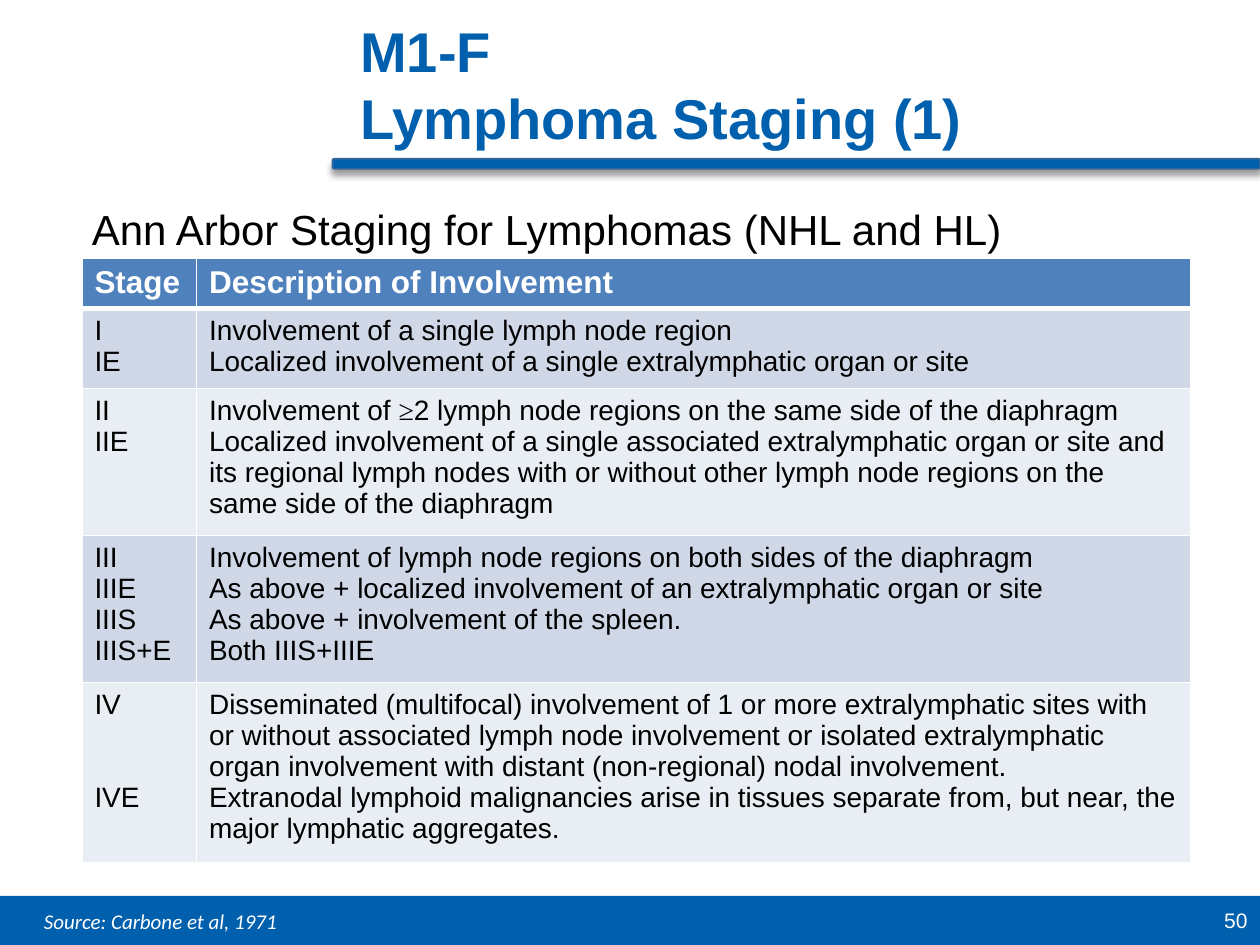
from dataclasses import dataclass

from lxml import etree
from pptx import Presentation
from pptx.dml.color import RGBColor
from pptx.enum.shapes import MSO_SHAPE
from pptx.enum.text import MSO_ANCHOR, MSO_AUTO_SIZE, PP_ALIGN
from pptx.oxml import parse_xml
from pptx.oxml.ns import nsdecls, qn
from pptx.util import Inches, Pt


@dataclass(frozen=True)
class Theme:
    blue: str = "0060AD"
    outline: str = "336699"
    header: str = "4F81BD"
    bands: tuple = ("D0D8E8", "E9EDF4")
    white: str = "FFFFFF"
    black: str = "000000"
    font: str = "Arial"
    source_font: str = "Calibri"
    symbol_font: str = "Times New Roman"
    title: int = 32
    subtitle: int = 24
    head: int = 18
    body: int = 16
    small: int = 12


THEME = Theme()
LINE_HEIGHT = 0.2475  # inches per line of table text
CELL_PADDING = 0.1
HEADINGS = ("Stage", "Description of Involvement")

# Each group: (stage, description, lines the description takes)
STAGE_GROUPS = [
    [("I", "Involvement of a single lymph node region", 1),
     ("IE", "Localized involvement of a single extralymphatic organ or site", 1)],
    [("II", "Involvement of ≥2 lymph node regions on the same side of the diaphragm", 1),
     ("IIE", "Localized involvement of a single associated extralymphatic organ or site "
             "and its regional lymph nodes with or without other lymph node regions on "
             "the same side of the diaphragm", 3)],
    [("III", "Involvement of lymph node regions on both sides of the diaphragm", 1),
     ("IIIE", "As above + localized involvement of an extralymphatic organ or site", 1),
     ("IIIS", "As above + involvement of the spleen.", 1),
     ("IIIS+E", "Both IIIS+IIIE", 1)],
    [("IV", "Disseminated (multifocal) involvement of 1 or more extralymphatic sites "
            "with or without associated lymph node involvement or isolated "
            "extralymphatic organ involvement with distant (non-regional) nodal "
            "involvement.", 3),
     ("IVE", "Extranodal lymphoid malignancies arise in tissues separate from, but "
             "near, the major lymphatic aggregates.", 2)],
]


def rgb(color):
    return RGBColor.from_string(color)


def add_run(paragraph, text, size, color, font=THEME.font, bold=False, italic=False):
    run = paragraph.add_run()
    run.text = text
    run.font.size = Pt(size)
    run.font.name = font
    run.font.bold = bold
    run.font.italic = italic
    run.font.color.rgb = rgb(color)


def add_text(slide, box, text, size, color, align=PP_ALIGN.LEFT,
             anchor=MSO_ANCHOR.TOP, **style):
    frame = slide.shapes.add_textbox(*map(Inches, box)).text_frame
    frame.word_wrap = True
    frame.vertical_anchor = anchor
    paragraph = frame.paragraphs[0]
    paragraph.alignment = align
    add_run(paragraph, text, size, color, **style)


def add_bar(slide, kind, box):
    bar = slide.shapes.add_shape(kind, *map(Inches, box))
    bar.shadow.inherit = False
    bar.fill.solid()
    bar.fill.fore_color.rgb = rgb(THEME.blue)
    bar.line.fill.background()
    return bar


def add_title_rule(slide):
    rule = add_bar(slide, MSO_SHAPE.ROUNDED_RECTANGLE, (2.64, 1.26, 7.36, 0.08))
    rule.line.color.rgb = rgb(THEME.outline)
    rule.line.width = Pt(1)
    effects = rule.element.spPr.find(qn("a:effectLst"))
    effects.append(parse_xml(
        f'<a:outerShdw {nsdecls("a")} blurRad="{Pt(4)}" dist="{Pt(3)}" dir="5400000" '
        f'rotWithShape="0"><a:srgbClr val="{THEME.black}"><a:alpha val="40000"/>'
        '</a:srgbClr></a:outerShdw>'))


def set_title(slide, lines):
    title = slide.shapes.title
    title.left, title.top, title.width, title.height = map(
        Inches, (2.76, 0.17, 7.24, 0.99))
    frame = title.text_frame
    frame.auto_size = MSO_AUTO_SIZE.NONE
    frame.vertical_anchor = MSO_ANCHOR.MIDDLE
    paragraph = frame.paragraphs[0]
    paragraph.alignment = PP_ALIGN.LEFT
    for index, line in enumerate(lines):
        if index:
            paragraph.add_line_break()
        add_run(paragraph, line, THEME.title, THEME.blue, bold=True)


def style_cell(cell, fill, top=1, bottom=1):
    """Fill a cell and give it white borders; top and bottom are widths in points."""
    properties = cell._tc.get_or_add_tcPr()
    for side, width in (("L", 1), ("R", 1), ("T", top), ("B", bottom)):
        line = etree.SubElement(properties, qn(f"a:ln{side}"), w=str(Pt(width)))
        solid = etree.SubElement(line, qn("a:solidFill"))
        etree.SubElement(solid, qn("a:srgbClr"), val=THEME.white)
    cell.fill.solid()
    cell.fill.fore_color.rgb = rgb(fill)


def add_description(paragraph, text):
    """Add body text, with the ≥ sign in the symbol font."""
    before, sign, after = text.partition("≥")
    parts = ((before, THEME.font), (sign, THEME.symbol_font), (after, THEME.font))
    for part, font in parts:
        if part:
            add_run(paragraph, part, THEME.body, THEME.black, font=font)


def fill_group(stage_cell, description_cell, group):
    """Write one stage group, keeping each stage level with its description."""
    extra_lines = 0
    for index, (stage, description, lines) in enumerate(group):
        frames = stage_cell.text_frame, description_cell.text_frame
        stage_paragraph, description_paragraph = (
            frame.add_paragraph() if index else frame.paragraphs[0] for frame in frames)
        if extra_lines:
            stage_paragraph.space_before = Pt(round(extra_lines * LINE_HEIGHT * 72, 1))
        add_run(stage_paragraph, stage, THEME.body, THEME.black)
        add_description(description_paragraph, description)
        extra_lines = lines - 1


def add_staging_table(slide):
    table = slide.shapes.add_table(
        len(STAGE_GROUPS) + 1, len(HEADINGS),
        *map(Inches, (0.65, 2.05, 8.8, 4.5))).table
    for column, width in zip(table.columns, (0.91, 7.89)):
        column.width = Inches(width)
    table.rows[0].height = Inches(0.4)
    for column, heading in enumerate(HEADINGS):
        cell = table.cell(0, column)
        style_cell(cell, THEME.header, bottom=3)
        add_run(cell.text_frame.paragraphs[0], heading, THEME.head, THEME.white, bold=True)
    for row, group in enumerate(STAGE_GROUPS, start=1):
        line_count = sum(lines for _, _, lines in group)
        table.rows[row].height = Inches(CELL_PADDING + line_count * LINE_HEIGHT)
        cells = [table.cell(row, column) for column in range(len(HEADINGS))]
        for cell in cells:
            style_cell(cell, THEME.bands[(row - 1) % 2], top=3 if row == 1 else 1)
        fill_group(*cells, group)


def main():
    presentation = Presentation()
    presentation.slide_width, presentation.slide_height = Inches(10), Inches(7.5)
    slide = presentation.slides.add_slide(presentation.slide_layouts.get_by_name("Title Only"))
    add_bar(slide, MSO_SHAPE.RECTANGLE, (0, 7.11, 10, 0.39))
    add_text(slide, (7.67, 7.11, 2.33, 0.39), "50", THEME.small, THEME.white,
             align=PP_ALIGN.RIGHT, anchor=MSO_ANCHOR.MIDDLE)
    add_title_rule(slide)
    set_title(slide, ("M1-F ", "Lymphoma Staging (1)"))
    add_text(slide, (0.63, 1.57, 8.82, 0.5), "Ann Arbor Staging for Lymphomas (NHL and HL)",
             THEME.subtitle, THEME.black)
    add_staging_table(slide)
    add_text(slide, (0.25, 7.16, 8.62, 0.3), "Source: Carbone et al, 1971",
             THEME.small, THEME.white, font=THEME.source_font, italic=True)
    presentation.save("out.pptx")


if __name__ == "__main__":
    main()
